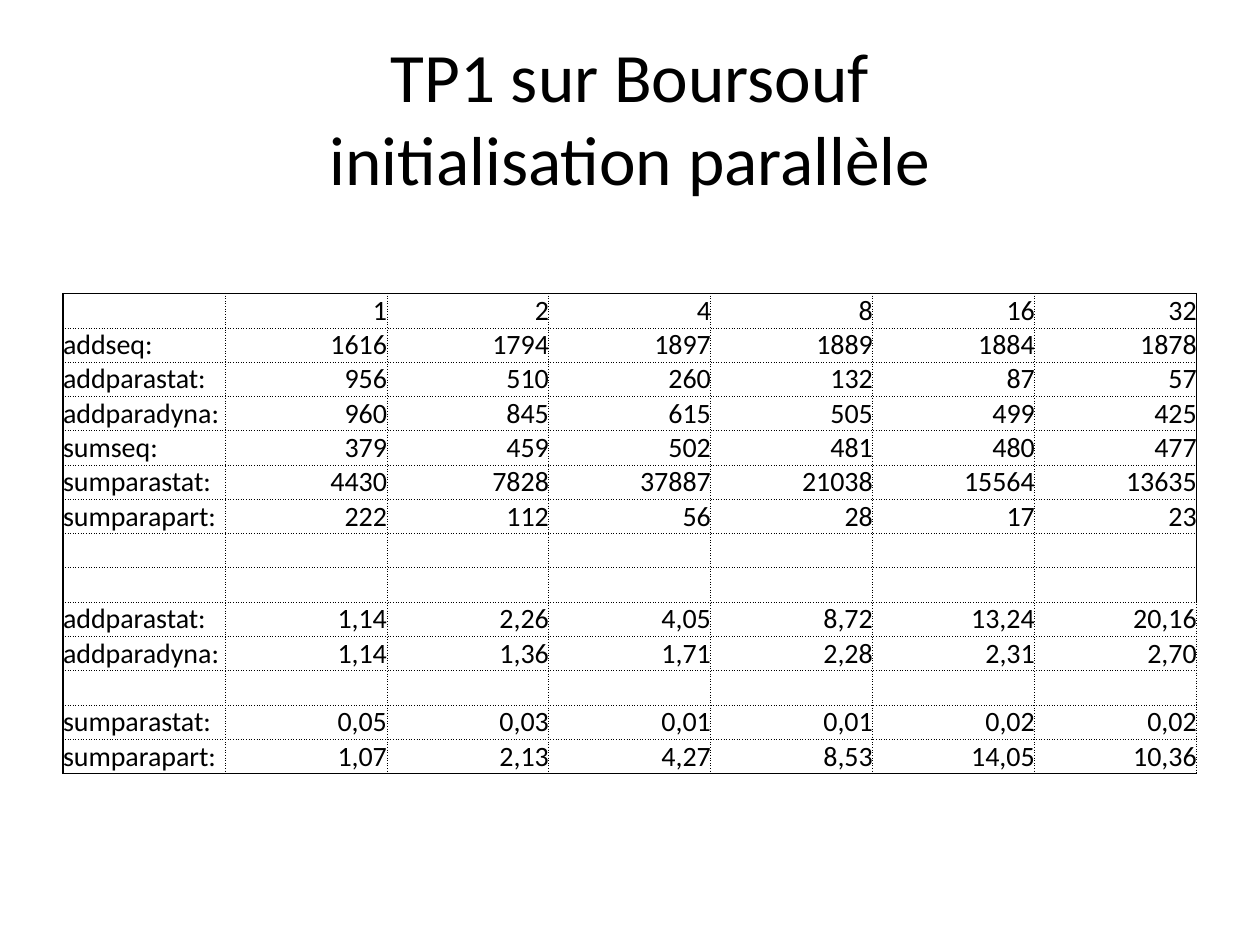
from lxml.etree import SubElement
from pptx import Presentation
from pptx.dml.color import RGBColor
from pptx.enum.text import MSO_ANCHOR, PP_ALIGN
from pptx.oxml.ns import qn
from pptx.util import Cm, Pt

COLORS = {"text": "000000", "border": "000000", "cell": "FFFFFF"}
FONT = "Calibri"
SOLID = (1, "solid")
DOTTED = (0.5, "sysDot")

# Timings per thread count, then the speedups; empty rows separate the groups
TIMINGS = [
    ["", "1", "2", "4", "8", "16", "32"],
    ["addseq:", "1616", "1794", "1897", "1889", "1884", "1878"],
    ["addparastat:", "956", "510", "260", "132", "87", "57"],
    ["addparadyna:", "960", "845", "615", "505", "499", "425"],
    ["sumseq:", "379", "459", "502", "481", "480", "477"],
    ["sumparastat:", "4430", "7828", "37887", "21038", "15564", "13635"],
    ["sumparapart:", "222", "112", "56", "28", "17", "23"],
    [""] * 7,
    [""] * 7,
]
SPEEDUPS = [
    ["addparastat:", "1,14", "2,26", "4,05", "8,72", "13,24", "20,16"],
    ["addparadyna:", "1,14", "1,36", "1,71", "2,28", "2,31", "2,70"],
    [""] * 7,
    ["sumparastat:", "0,05", "0,03", "0,01", "0,01", "0,02", "0,02"],
    ["sumparapart:", "1,07", "2,13", "4,27", "8,53", "14,05", "10,36"],
]


def format_paragraph(paragraph, size, align):
    paragraph.alignment = align
    paragraph.font.name = FONT
    paragraph.font.size = Pt(size)
    paragraph.font.color.rgb = RGBColor.from_string(COLORS["text"])


def add_title(slide, text):
    title = slide.shapes.title
    title.left, title.top = Cm(1.27), Cm(0.76)
    title.width, title.height = Cm(22.86), Cm(3.18)
    title.text_frame.text = text
    title.text_frame.vertical_anchor = MSO_ANCHOR.MIDDLE
    format_paragraph(title.text_frame.paragraphs[0], 39.6, PP_ALIGN.CENTER)


def set_border(cell, side, width, dash):
    line = SubElement(cell._tc.get_or_add_tcPr(), qn(f"a:ln{side}"), w=str(Pt(width)))
    fill = SubElement(line, qn("a:solidFill"))
    SubElement(fill, qn("a:srgbClr"), val=COLORS["border"])
    SubElement(line, qn("a:prstDash"), val=dash)


def set_borders(cell, row, column, row_count, column_count):
    # The solid right edge runs along the timings only
    outer = {
        "L": column == 0,
        "R": column == column_count - 1 and row < len(TIMINGS),
        "T": row == 0,
        "B": row == row_count - 1,
    }
    for side, is_outer in outer.items():
        set_border(cell, side, *(SOLID if is_outer else DOTTED))


def fill_cell(cell, text, align):
    cell.margin_left = cell.margin_right = cell.margin_top = cell.margin_bottom = 0
    cell.vertical_anchor = MSO_ANCHOR.BOTTOM
    cell.text = text
    format_paragraph(cell.text_frame.paragraphs[0], 16, align)
    cell.fill.solid()
    cell.fill.fore_color.rgb = RGBColor.from_string(COLORS["cell"])


def add_results(slide, rows):
    row_count, column_count = len(rows), len(rows[0])
    results = slide.shapes.add_table(
        row_count, column_count, Cm(1.27), Cm(5.92), Cm(22.86), Cm(9.63)
    ).table
    results.first_row = results.horz_banding = False
    for r, values in enumerate(rows):
        for c, value in enumerate(values):
            cell = results.cell(r, c)
            set_borders(cell, r, c, row_count, column_count)
            fill_cell(cell, value, PP_ALIGN.RIGHT if c else PP_ALIGN.LEFT)


def main():
    presentation = Presentation()
    presentation.slide_width, presentation.slide_height = Cm(25.4), Cm(19.05)
    slide = presentation.slides.add_slide(presentation.slide_layouts[5])
    add_title(slide, "TP1 sur Boursouf\vinitialisation parallèle")
    add_results(slide, TIMINGS + SPEEDUPS)
    presentation.save("out.pptx")


if __name__ == "__main__":
    main()
